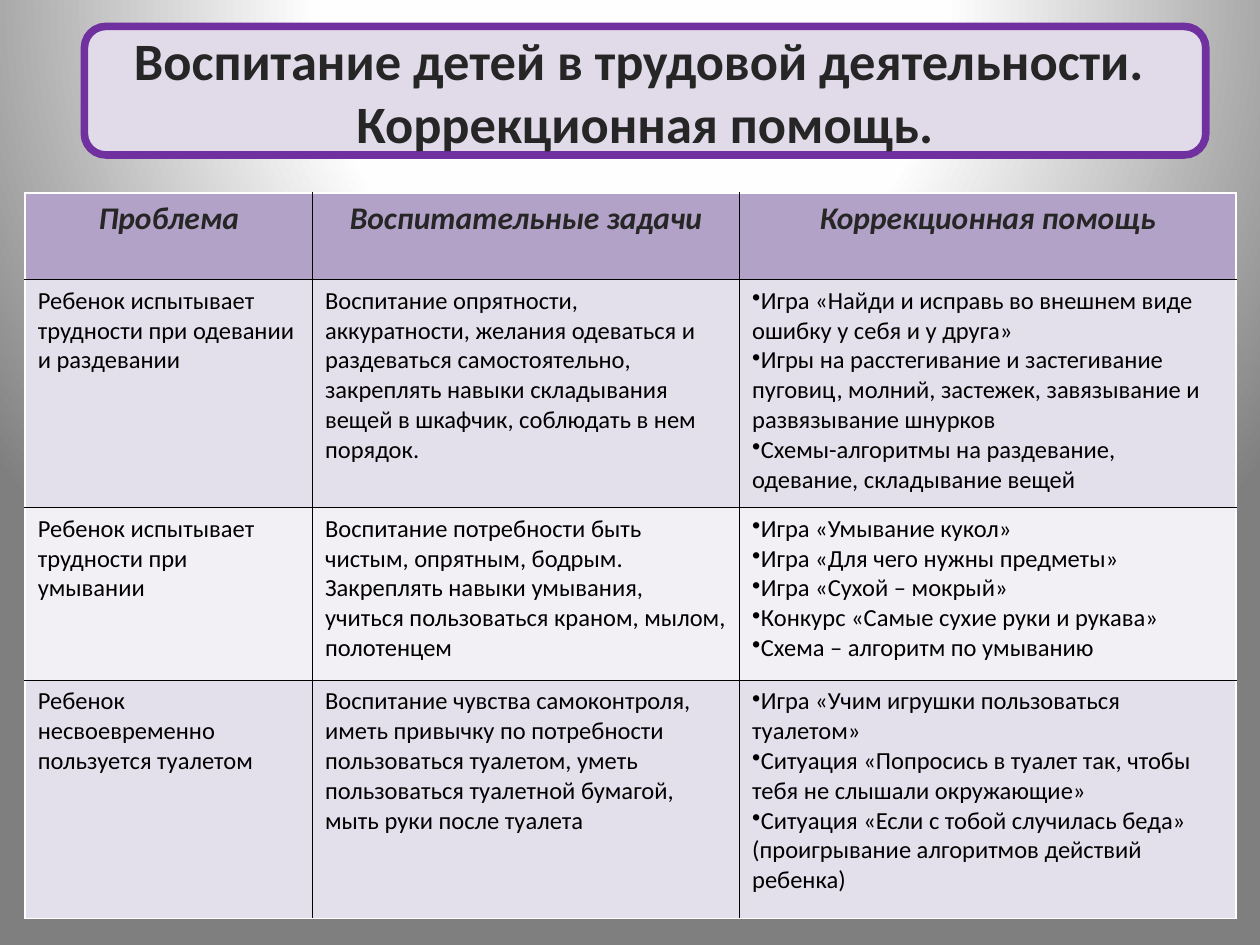
from pptx import Presentation
from pptx.dml.color import RGBColor
from pptx.enum.shapes import MSO_SHAPE
from pptx.enum.text import MSO_ANCHOR, PP_ALIGN
from pptx.oxml import parse_xml
from pptx.oxml.ns import nsdecls
from pptx.util import Inches, Pt

COLORS = {
    "title_fill": "E0DAE9", "title_line": "7030A0", "heading": "262626",
    "header_fill": "B2A2C7", "odd_row": "E4E0EB", "even_row": "F2F0F5",
    "text": "000000", "inner": "000000", "outer": "FFFFFF",
}
GRADIENT = [(0, "FFFFFF"), (40, "FEFEFE"), (100, "7F7F7F")]
TITLE = ["Воспитание детей в трудовой деятельности. ", "Коррекционная помощь."]
HEADERS = ["Проблема", "Воспитательные задачи", "Коррекционная помощь"]
ROWS = [
    ("Ребенок испытывает трудности при одевании и раздевании",
     "Воспитание опрятности, аккуратности, желания одеваться и раздеваться "
     "самостоятельно, закреплять навыки складывания вещей в шкафчик, "
     "соблюдать в нем порядок.",
     ["Игра «Найди и исправь во внешнем виде ошибку у себя и у друга»",
      "Игры на расстегивание и застегивание пуговиц, молний, застежек, "
      "завязывание и развязывание шнурков",
      "Схемы-алгоритмы на раздевание, одевание, складывание вещей"]),
    ("Ребенок испытывает трудности при умывании",
     "Воспитание потребности быть чистым, опрятным, бодрым. Закреплять навыки "
     "умывания, учиться пользоваться краном, мылом, полотенцем",
     ["Игра «Умывание кукол»",
      "Игра «Для чего нужны предметы»",
      "Игра «Сухой – мокрый»",
      "Конкурс «Самые сухие руки и рукава»",
      "Схема – алгоритм по умыванию"]),
    ("Ребенок несвоевременно пользуется туалетом",
     "Воспитание чувства самоконтроля, иметь привычку по потребности "
     "пользоваться туалетом, уметь пользоваться туалетной бумагой, "
     "мыть руки после туалета",
     ["Игра «Учим игрушки пользоваться туалетом»",
      "Ситуация «Попросись в туалет так, чтобы тебя не слышали окружающие»",
      "Ситуация «Если с тобой случилась беда» (проигрывание алгоритмов "
      "действий ребенка)"]),
]
COLUMN_WIDTHS = [2.28, 3.39, 3.94]
ROW_HEIGHTS = [0.69, 1.81, 1.37, 1.89]


def color(name):
    return RGBColor.from_string(COLORS[name])


def write(frame, lines, size=14, ink="text", bold=False, italic=False,
          align=PP_ALIGN.LEFT, bullet=False):
    frame.word_wrap = True
    for index, line in enumerate(lines):
        para = frame.paragraphs[0] if index == 0 else frame.add_paragraph()
        para.alignment = align
        if bullet:
            para._p.get_or_add_pPr().append(
                parse_xml(f'<a:buChar {nsdecls("a")} char="•"/>'))
        span = para.add_run()
        span.text = line
        font = span.font
        font.name, font.size, font.bold, font.italic = "Calibri", Pt(size), bold, italic
        font.color.rgb = color(ink)


def paint_background(page):
    page.background.fill.gradient()
    stops = "".join(f'<a:gs pos="{share * 1000}"><a:srgbClr val="{ink}"/></a:gs>'
                    for share, ink in GRADIENT)
    gradient = parse_xml(
        f'<a:gradFill {nsdecls("a")} rotWithShape="1"><a:gsLst>{stops}</a:gsLst>'
        '<a:path path="circle"><a:fillToRect l="50000" t="-80000" r="50000" '
        'b="180000"/></a:path></a:gradFill>')
    plain = page.element.xpath(".//p:bgPr/a:gradFill")[0]
    plain.getparent().replace(plain, gradient)


def set_borders(cell, row, column):
    edges = {
        "lnL": column == 0, "lnR": column == len(HEADERS) - 1,
        "lnT": row == 0, "lnB": row == len(ROWS),
    }
    for index, (edge, outside) in enumerate(edges.items()):
        ink = COLORS["outer" if outside else "inner"]
        cell._tc.get_or_add_tcPr().insert(index, parse_xml(
            f'<a:{edge} {nsdecls("a")} w="12700"><a:solidFill>'
            f'<a:srgbClr val="{ink}"/></a:solidFill></a:{edge}>'))


def add_title(page):
    box = page.shapes.add_shape(MSO_SHAPE.ROUNDED_RECTANGLE, Inches(0.67),
                                Inches(0.21), Inches(8.9), Inches(1.02))
    box.shadow.inherit = False
    box.fill.solid()
    box.fill.fore_color.rgb = color("title_fill")
    box.line.color.rgb = color("title_line")
    box.line.width = Pt(4.33)
    box.text_frame.vertical_anchor = MSO_ANCHOR.MIDDLE
    write(box.text_frame, TITLE, size=30, ink="heading", bold=True,
          align=PP_ALIGN.CENTER)


def add_help_table(page):
    table = page.shapes.add_table(
        len(ROW_HEIGHTS), len(COLUMN_WIDTHS), Inches(0.2), Inches(1.53),
        Inches(sum(COLUMN_WIDTHS)), Inches(sum(ROW_HEIGHTS))).table
    for column, width in zip(table.columns, COLUMN_WIDTHS):
        column.width = Inches(width)
    for row, height in zip(table.rows, ROW_HEIGHTS):
        row.height = Inches(height)
    for row, content in enumerate([HEADERS] + ROWS):
        fill = "header_fill" if row == 0 else "odd_row" if row % 2 else "even_row"
        for column, entry in enumerate(content):
            cell = table.cell(row, column)
            cell.fill.solid()
            cell.fill.fore_color.rgb = color(fill)
            set_borders(cell, row, column)
            if row == 0:
                write(cell.text_frame, [entry], size=18, ink="heading", bold=True,
                      italic=True, align=PP_ALIGN.CENTER)
            else:
                listed = isinstance(entry, list)
                write(cell.text_frame, entry if listed else [entry], bullet=listed)


def main():
    deck = Presentation()
    deck.slide_width, deck.slide_height = Inches(10), Inches(7.5)
    page = deck.slides.add_slide(deck.slide_layouts[6])
    paint_background(page)
    add_title(page)
    add_help_table(page)
    deck.save("out.pptx")


if __name__ == "__main__":
    main()
